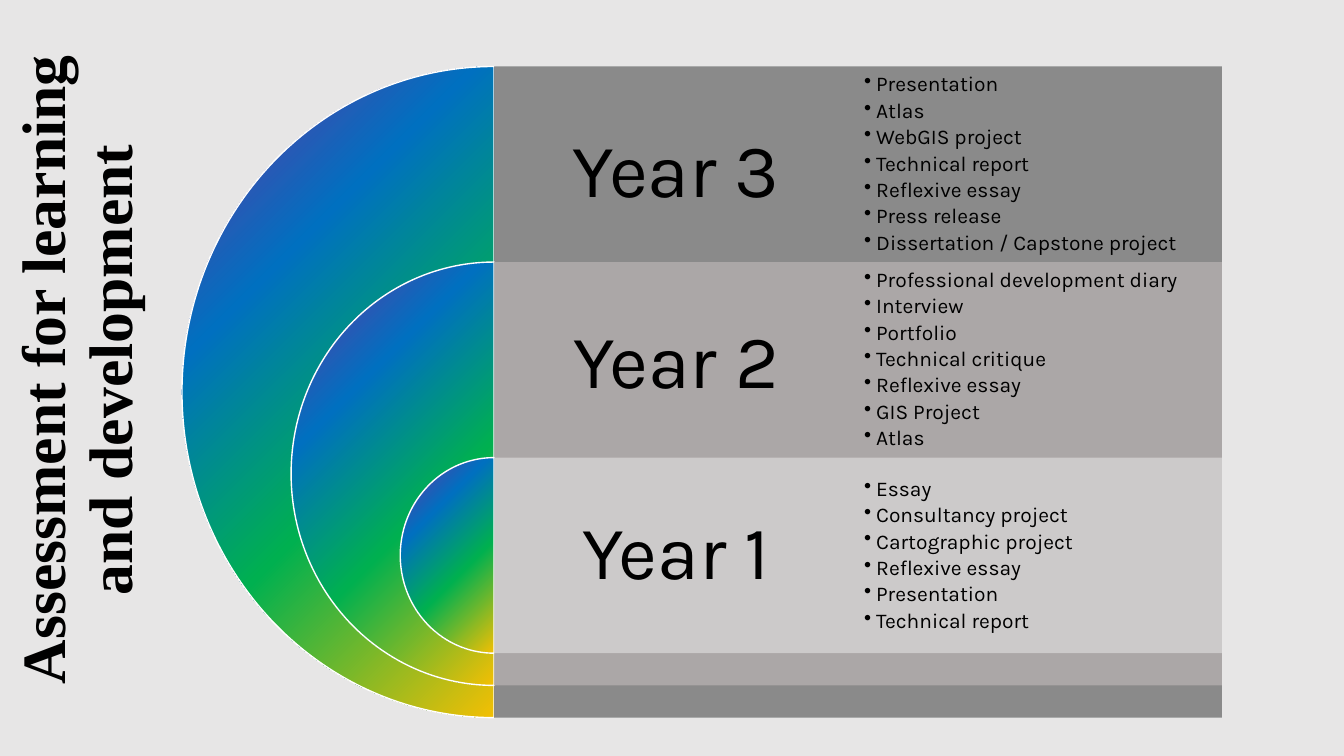
from lxml import etree
from pptx import Presentation
from pptx.dml.color import RGBColor
from pptx.enum.shapes import MSO_SHAPE
from pptx.enum.text import MSO_ANCHOR, PP_ALIGN
from pptx.oxml import parse_xml
from pptx.oxml.ns import nsdecls, qn
from pptx.util import Inches, Pt

PIE, RECTANGLE = MSO_SHAPE.PIE, MSO_SHAPE.RECTANGLE
MIDDLE, CENTER, LEFT = MSO_ANCHOR.MIDDLE, PP_ALIGN.CENTER, PP_ALIGN.LEFT

# Content, from the outer half circle to the inner one
TITLE = "Assessment for learning and development"
YEARS = [
    ("Year 3", "808080", [
        "Presentation", "Atlas", "WebGIS project", "Technical report",
        "Reflexive essay", "Press release", "Dissertation / Capstone project"]),
    ("Year 2", "AFABAB", [
        "Professional development diary", "Interview", "Portfolio",
        "Technical critique", "Reflexive essay", "GIS Project", "Atlas"]),
    ("Year 1", "D0CECE", [
        "Essay", "Consultancy project", "Cartographic project",
        "Reflexive essay", "Presentation", "Technical report"]),
]

THEME = {
    "background": "E7E6E6",
    "outline": "FFFFFF",
    "band_opacity": 90,
    "gradient": [(0, "FF0000"), (23, "FFC000"), (54, "00B050"),
                 (77, "0070C0"), (100, "7030A0")],
    "title": {"name": "Times New Roman", "size": Pt(44), "bold": True},
    "year": {"name": "Karla", "size": Pt(54)},
    "item": {"name": "Karla", "size": Pt(15)},
    "text": "000000",
}
TITLE_FORMAT = {"alignment": CENTER, "line_spacing": 0.9}
YEAR_FORMAT = {"alignment": CENTER, "line_spacing": 0.9, "space_after": Pt(22)}
ITEM_FORMAT = {"alignment": LEFT, "line_spacing": 0.9, "space_after": Pt(2.6)}

# Layout in inches
TOP, ROW_HEIGHT, HEIGHT_STEP = 0.66, 1.94, 2.26
AXIS, BAND_WIDTH, LIST_WIDTH = 4.9, 7.22, 3.61
INNER_PIE_WIDTH, PIE_WIDTH_STEP = 1.86, 2.165
YEAR_INSET, BOTTOM_INSET_STEP, LIST_INSET = 0.27, 2.17, 0.06


def set_values(target, values):
    for name, value in values.items():
        setattr(target, name, value)


def write_paragraph(paragraph, text, paragraph_format, font_format):
    set_values(paragraph, paragraph_format)
    run = paragraph.add_run()
    run.text = text
    set_values(run.font, font_format)
    run.font.color.rgb = RGBColor.from_string(THEME["text"])


def prepare_frame(shape, insets):
    frame = shape.text_frame
    sides = ("margin_left", "margin_top", "margin_right", "margin_bottom")
    set_values(frame, dict(zip(sides, map(Inches, insets))))
    set_values(frame, {"word_wrap": True, "vertical_anchor": MIDDLE})
    return frame


def fill_gradient(shape):
    stops = "".join(
        f'<a:gs pos="{position * 1000}"><a:srgbClr val="{color}"/></a:gs>'
        for position, color in THEME["gradient"])
    gradient = parse_xml(
        f'<a:gradFill {nsdecls("a")} rotWithShape="1"><a:gsLst>{stops}</a:gsLst>'
        '<a:path path="circle"><a:fillToRect l="100000" t="100000"/></a:path>'
        '<a:tileRect r="-100000" b="-100000"/></a:gradFill>')
    geometry = shape.element.spPr.find(qn("a:prstGeom"))
    geometry.addnext(gradient)


def add_half_circle(slide, top, width, height):
    pie = slide.shapes.add_shape(PIE, Inches(AXIS - width / 2), Inches(top),
                                 Inches(width), Inches(height))
    pie.shadow.inherit = False
    pie.adjustments[0], pie.adjustments[1] = 54, 162
    fill_gradient(pie)
    pie.line.color.rgb = RGBColor.from_string(THEME["outline"])
    pie.line.width = Pt(1)


def add_band(slide, label, color, top, height, bottom_inset):
    band = slide.shapes.add_shape(RECTANGLE, Inches(AXIS), Inches(top),
                                  Inches(BAND_WIDTH), Inches(height))
    band.shadow.inherit = False
    band.fill.solid()
    band.fill.fore_color.rgb = RGBColor.from_string(color)
    color_element = band.element.spPr.find(qn("a:solidFill"))[0]
    alpha = etree.SubElement(color_element, qn("a:alpha"))
    alpha.set("val", str(THEME["band_opacity"] * 1000))
    band.line.fill.background()
    right_inset = LIST_WIDTH + YEAR_INSET
    frame = prepare_frame(band, (YEAR_INSET, YEAR_INSET, right_inset, bottom_inset))
    write_paragraph(frame.paragraphs[0], label, YEAR_FORMAT, THEME["year"])


def add_list(slide, items, top):
    box = slide.shapes.add_textbox(Inches(AXIS + BAND_WIDTH - LIST_WIDTH), Inches(top),
                                   Inches(LIST_WIDTH), Inches(ROW_HEIGHT))
    frame = prepare_frame(box, [LIST_INSET] * 4)
    for index, item in enumerate(items):
        paragraph = frame.add_paragraph() if index else frame.paragraphs[0]
        properties = paragraph._p.get_or_add_pPr()
        properties.set("marL", str(Inches(0.12)))
        properties.set("indent", str(Inches(-0.12)))
        etree.SubElement(properties, qn("a:buChar")).set("char", "•")
        write_paragraph(paragraph, item, ITEM_FORMAT, THEME["item"])


def main():
    presentation = Presentation()
    presentation.slide_width = Inches(13.33)
    presentation.slide_height = Inches(7.5)
    slide = presentation.slides.add_slide(presentation.slide_layouts[6])
    slide.background.fill.solid()
    slide.background.fill.fore_color.rgb = RGBColor.from_string(THEME["background"])

    # Vertical title
    title = slide.shapes.add_textbox(Inches(-2.66), Inches(3.08), Inches(6.89), Inches(1.18))
    title.rotation = 270
    frame = prepare_frame(title, (0.1, 0.05, 0.1, 0.05))
    write_paragraph(frame.paragraphs[0], TITLE, TITLE_FORMAT, THEME["title"])

    # Nested half circles and their bands
    row_tops = [TOP + ROW_HEIGHT * row for row in range(len(YEARS))]
    for row, (label, color, _) in enumerate(YEARS):
        steps = len(YEARS) - 1 - row
        height = ROW_HEIGHT + HEIGHT_STEP * steps
        add_half_circle(slide, row_tops[row], INNER_PIE_WIDTH + PIE_WIDTH_STEP * steps, height)
        add_band(slide, label, color, row_tops[row], height,
                 YEAR_INSET + BOTTOM_INSET_STEP * steps)

    # Assessment lists
    for top, (_, _, items) in zip(row_tops, YEARS):
        add_list(slide, items, top)

    presentation.save("out.pptx")


if __name__ == "__main__":
    main()
